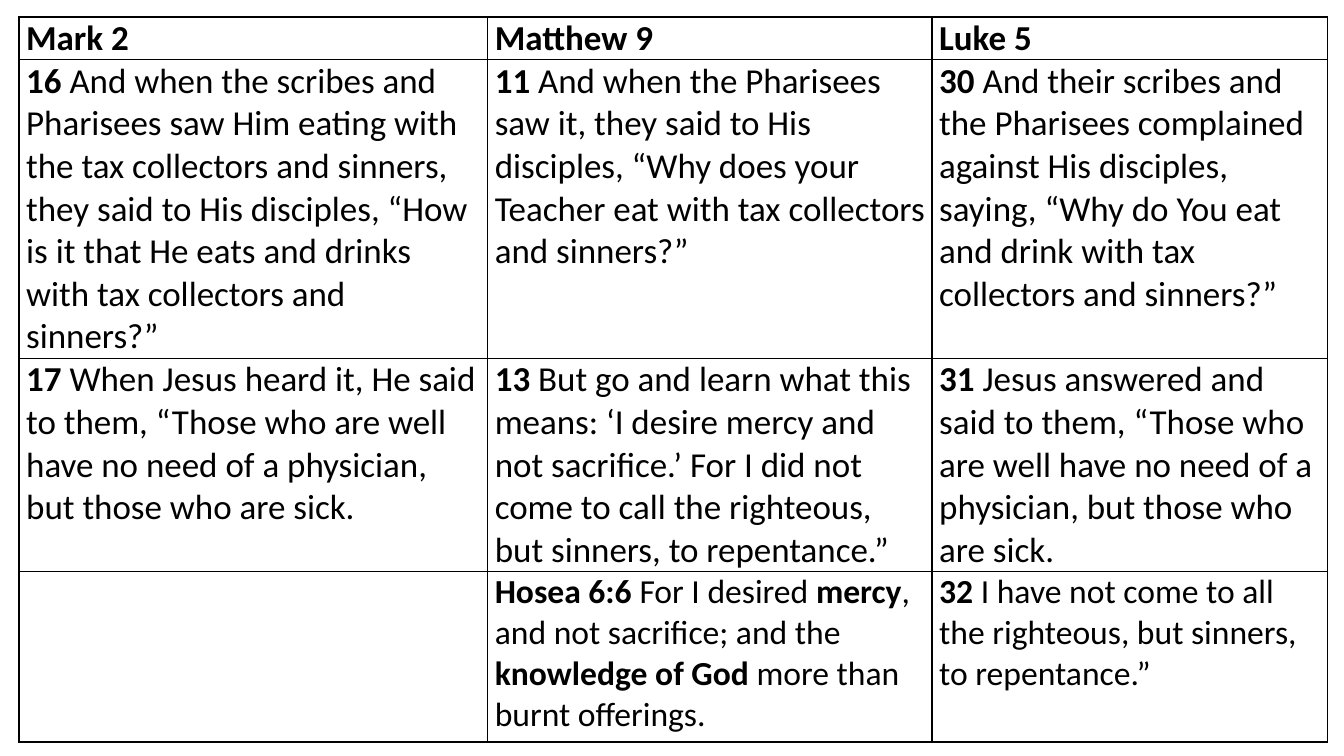
from lxml.etree import SubElement
from pptx import Presentation
from pptx.dml.color import RGBColor
from pptx.oxml.ns import qn
from pptx.util import Cm, Pt

BLACK = RGBColor(0x00, 0x00, 0x00)
WHITE = RGBColor(0xFF, 0xFF, 0xFF)

COLUMN_WIDTHS = [11.81, 11.2, 9.96]
ROW_HEIGHTS = [1.04, 7.29, 5.21, 4.29]
ROW_SIZES = [25, 25, 25, 24]

# Double asterisks enclose bold passages.
PASSAGES = [
    ["**Mark 2**", "**Matthew 9**", "**Luke 5**"],
    [
        "**16** And when the scribes and Pharisees saw Him eating with the tax collectors "
        "and sinners, they said to His disciples, “How is it that He eats and drinks "
        "with tax collectors and sinners?”",
        "**11** And when the Pharisees saw it, they said to His disciples, “Why does "
        "your Teacher eat with tax collectors and sinners?”",
        "**30** And their scribes and the Pharisees complained against His disciples, "
        "saying, “Why do You eat and drink with tax collectors and sinners?”",
    ],
    [
        "**17** When Jesus heard it, He said to them, “Those who are well have no need "
        "of a physician, but those who are sick.",
        "**13** But go and learn what this means: ‘I desire mercy and not sacrifice.’ "
        "For I did not come to call the righteous, but sinners, to repentance.”",
        "**31 **Jesus answered and said to them, “Those who are well have no need of a "
        "physician, but those who are sick.",
    ],
    [
        "",
        "**Hosea 6:6 **For I desired **mercy**, and not sacrifice; and the "
        "**knowledge of God **more than burnt offerings.",
        "**32** I have not come to all the righteous, but sinners, to repentance.”",
    ],
]


def write_text(para, text, size, font="Calibri", color=BLACK, space_after=7.5):
    """Fill a paragraph, setting the passages between double asterisks in bold."""
    para.space_after = Pt(space_after)
    para.font.size = Pt(size)
    for index, part in enumerate(text.split("**")):
        if part:
            span = para.add_run()
            span.text = part
            span.font.name = font
            span.font.size = Pt(size)
            span.font.bold = index % 2 == 1
            span.font.color.rgb = color


class SlideBuilder:
    def __init__(self, slide, border=BLACK, fill=WHITE):
        self.slide = slide
        self.border = border
        self.fill = fill

    def add_border(self, cell, width=1):
        properties = cell._tc.get_or_add_tcPr()
        for position, side in enumerate(("lnL", "lnR", "lnT", "lnB")):
            line = SubElement(properties, qn(f"a:{side}"), w=str(Pt(width)))
            solid = SubElement(line, qn("a:solidFill"))
            SubElement(solid, qn("a:srgbClr"), val=str(self.border))
            properties.insert(position, line)

    def add_table(self, rows, left, top, widths, heights, sizes):
        frame = self.slide.shapes.add_table(
            len(heights), len(widths), Cm(left), Cm(top), Cm(sum(widths)), Cm(sum(heights)))
        table = frame.table
        table.first_row = table.horz_banding = False
        for column, width in zip(table.columns, widths):
            column.width = Cm(width)
        for row, height, texts, size in zip(table.rows, heights, rows, sizes):
            row.height = Cm(height)
            for cell, text in zip(row.cells, texts):
                cell.margin_left = cell.margin_right = Cm(0.18)
                cell.margin_top = cell.margin_bottom = 0
                cell.fill.solid()
                cell.fill.fore_color.rgb = self.fill
                self.add_border(cell)
                write_text(cell.text_frame.paragraphs[0], text, size)


def main():
    deck = Presentation()
    deck.slide_width, deck.slide_height = Cm(33.87), Cm(19.05)
    builder = SlideBuilder(deck.slides.add_slide(deck.slide_layouts[6]))
    builder.add_table(PASSAGES, 0.48, 0.43, COLUMN_WIDTHS, ROW_HEIGHTS, ROW_SIZES)
    deck.save("out.pptx")


if __name__ == "__main__":
    main()
